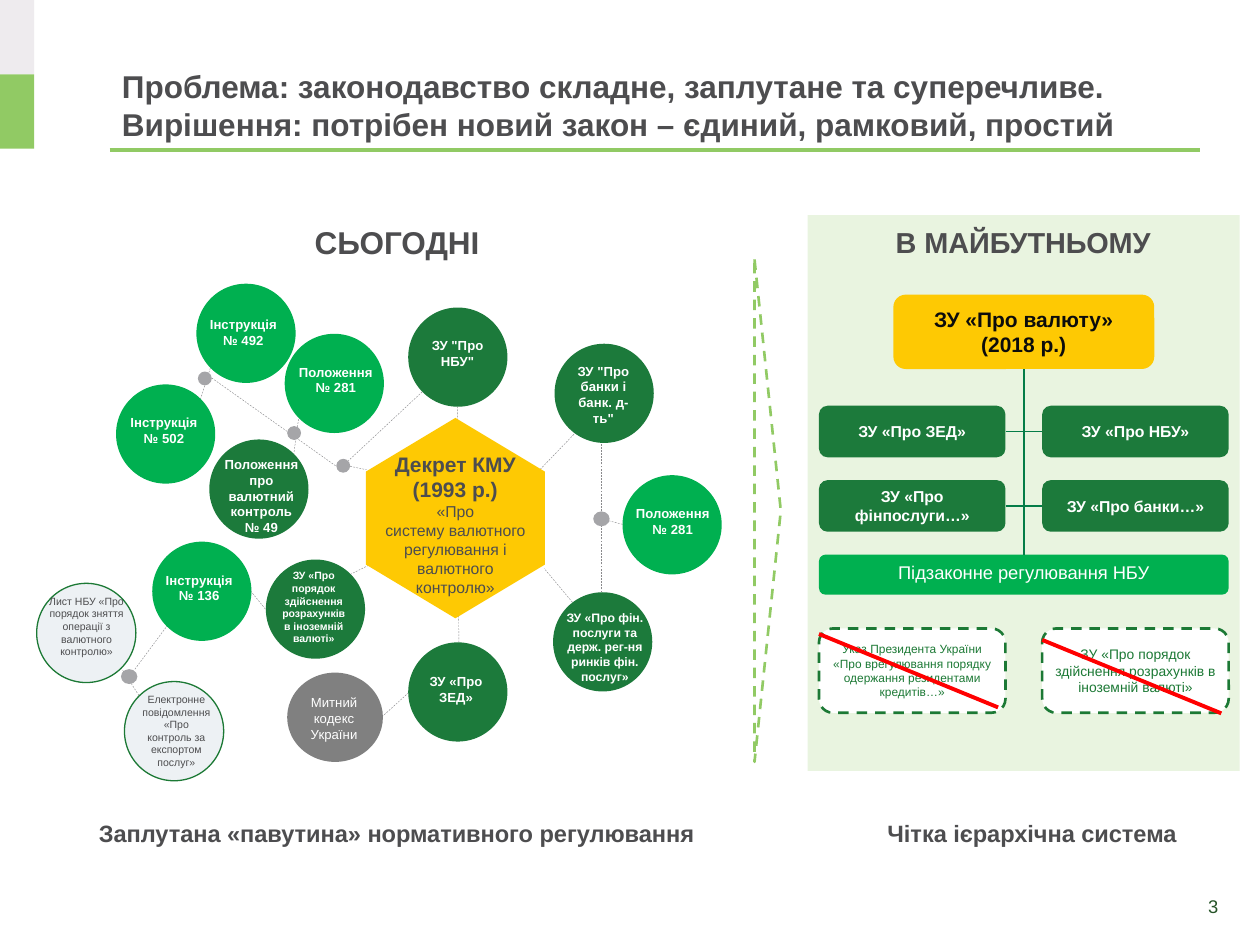
from typing import NamedTuple, Optional

import pptx
import pptx.dml.color
import pptx.enum.dml
import pptx.enum.shapes
import pptx.enum.text
import pptx.oxml.ns
import pptx.util
from lxml import etree

Cm, Pt = pptx.util.Cm, pptx.util.Pt
SHAPE = pptx.enum.shapes.MSO_SHAPE
ALIGN = pptx.enum.text.PP_ALIGN
ANCHOR = pptx.enum.text.MSO_ANCHOR

GREY, WHITE, BLACK = "4D4D4F", "FFFFFF", "0C0C0C"
DARK, BRIGHT, LIME, EDGE = "1C7A3B", "00B050", "91CA64", "1C7935"
YELLOW, PALE, CUSTOMS = "FEC903", "EDF1F4", "808080"
WEB, DOT, TREE, RED = "8A8A8D", "A5A5A8", "057C48", "FF0000"


class Box(NamedTuple):
    """Left, top, width and height in centimetres."""
    x: float
    y: float
    w: float
    h: float


class Style(NamedTuple):
    size: float
    color: str = GREY
    bold: bool = False


class Bubble(NamedTuple):
    text: str
    circle: Box
    label: Box
    fill: str
    style: Style
    edge: Optional[str] = None


class Caption(NamedTuple):
    text: str
    box: Box
    size: float


NORM = Style(7.5, WHITE, True)
SMALL = Style(6, GREY)
BOX_STYLE = Style(9, WHITE, True)


def disc(x: float, y: float) -> Box:
    return Box(x, y, 2, 2)


BUBBLES = [
    Bubble("Положення № 281", disc(12.55, 9.58), Box(12.52, 10.06, 2.08, 0.89), BRIGHT, NORM),
    Bubble('ЗУ "Про банки і банк. д-ть"', disc(11.18, 6.93), Box(11.2, 7.19, 1.93, 1.22), DARK, NORM),
    Bubble("ЗУ «Про фін. послуги та держ. рег-ня ринків фін. послуг»", disc(11.15, 11.94),
           Box(11.13, 12.17, 2.13, 1.75), DARK, Style(7, WHITE, True)),
    Bubble('ЗУ "Про НБУ"', disc(8.23, 6.2), Box(8.26, 6.68, 1.93, 0.89), DARK, NORM),
    Bubble("ЗУ «Про ЗЕД»", disc(8.23, 12.95), Box(8.23, 13.44, 1.93, 0.89), DARK, NORM),
    Bubble("ЗУ «Про порядок здійснення розрахунків в іноземній валюті»", disc(5.36, 11.28),
           Box(5.36, 11.35, 1.93, 1.8), DARK, Style(6, WHITE, True)),
    Bubble("Положення № 281", disc(5.74, 6.73), Box(5.74, 7.21, 2.06, 0.89), BRIGHT, NORM),
    Bubble("Положення про валютний контроль № 49", disc(4.22, 8.86),
           Box(4.24, 9.07, 2.06, 1.85), DARK, NORM),
    Bubble("Інструкція № 136", disc(3.07, 10.92), Box(3.05, 11.4, 1.93, 0.89), BRIGHT, NORM),
    Bubble("Лист НБУ «Про порядок зняття операції з валютного контролю»", disc(0.74, 11.76),
           Box(0.74, 11.86, 2.01, 2.01), PALE, SMALL, EDGE),
    Bubble("Електронне повідомлення «Про контроль за експортом послуг»", disc(2.51, 13.74),
           Box(2.59, 13.84, 1.93, 1.8), PALE, SMALL, EDGE),
    Bubble("Митний кодекс України", Box(5.79, 13.56, 1.93, 1.8),
           Box(5.77, 13.87, 1.93, 1.22), CUSTOMS, Style(7.5, WHITE)),
    Bubble("Інструкція № 492", disc(3.96, 5.72), Box(3.94, 6.25, 1.93, 0.89), BRIGHT, NORM),
    Bubble("Інструкція № 502", disc(2.34, 7.75), Box(2.34, 8.23, 1.93, 0.89), BRIGHT, NORM),
]
WEB_LINES = [
    (7.7, 14.45, 8.23, 13.97), (5.05, 11.91, 5.36, 12.29), (2.44, 13.46, 2.82, 14.05),
    (12.12, 12.95, 12.12, 8), (11.58, 12.19, 10.97, 11.46), (10.19, 10.19, 11.68, 8.64),
    (9.25, 12.95, 9.22, 8.2), (12.55, 10.57, 12.12, 10.46), (7.06, 11.58, 7.42, 11.4),
    (7.01, 9.3, 8.51, 7.9), (7.06, 9.4, 7.39, 9.47), (4.27, 7.62, 6.78, 9.4),
    (5.92, 9.17, 6.02, 8.43), (4.04, 8.05, 4.24, 7.42), (2.72, 13.49, 3.38, 12.6),
]
DOTS = [Box(6.78, 9.25, 0.28, 0.28), Box(11.96, 10.31, 0.33, 0.3), Box(5.79, 8.59, 0.28, 0.28),
        Box(3.99, 7.49, 0.28, 0.28), Box(2.44, 13.49, 0.33, 0.3)]
CAPTIONS = [
    Caption("Чітка ієрархічна система", Box(17.58, 16.38, 6.45, 0.84), 13.5),
    Caption("Заплутана «павутина» нормативного регулювання", Box(1.63, 16.38, 12.73, 0.84), 13.5),
    Caption("СЬОГОДНІ", Box(6.05, 4.37, 3.91, 1.02), 18),
    Caption("В МАЙБУТНЬОМУ", Box(17.73, 4.39, 5.79, 0.97), 16.5),
]
COLUMNS = (16.51, 21.01)
BOX_W = 3.76
LAW_ROWS = [(8.18, ("ЗУ «Про ЗЕД»", "ЗУ «Про НБУ»")),
            (9.68, ("ЗУ «Про фінпослуги…»", "ЗУ «Про банки…»"))]
# text, size, drop of the strike line below the box top
REPEALED = [
    ("Указ Президента України «Про врегулювання порядку одержання резидентами кредитів…»", 6.8, 0.11),
    ("ЗУ «Про порядок здійснення розрахунків в іноземній валюті»", 7.9, 0.23),
]


def rgb(value: str):
    return pptx.dml.color.RGBColor.from_string(value)


def set_line(line, color: str, width: float, dashed: bool) -> None:
    line.color.rgb = rgb(color)
    line.width = Pt(width)
    if dashed:
        line.dash_style = pptx.enum.dml.MSO_LINE.DASH


def add_shape(s, kind, box: Box, fill: str, edge: Optional[str] = None,
              width: float = 0.75, dashed: bool = False):
    sp = s.shapes.add_shape(kind, *map(Cm, box))
    sp.shadow.inherit = False
    sp.fill.solid()
    sp.fill.fore_color.rgb = rgb(fill)
    if edge:
        set_line(sp.line, edge, width, dashed)
    else:
        sp.line.fill.background()
    return sp


def add_line(s, ends, color: str, width: float, dashed: bool = False):
    c = s.shapes.add_connector(pptx.enum.shapes.MSO_CONNECTOR.STRAIGHT, *map(Cm, ends))
    set_line(c.line, color, width, dashed)
    etree.SubElement(c._element.spPr, pptx.oxml.ns.qn("a:effectLst"))
    return c


def join(s, first, first_site: int, last, last_site: int) -> None:
    c = add_line(s, (0, 0, 0, 0), TREE, 0.75)
    c.begin_connect(first, first_site)
    c.end_connect(last, last_site)


def set_text(sp, text: str, style: Style, align=ALIGN.CENTER, anchor=ANCHOR.MIDDLE,
             insets=(0.25, 0.13, 0.25, 0.13), wrap: bool = True, grow: bool = False):
    tf = sp.text_frame
    tf.text = text
    tf.word_wrap = wrap
    tf.vertical_anchor = anchor
    tf.margin_left, tf.margin_top, tf.margin_right, tf.margin_bottom = map(Cm, insets)
    if grow:
        tf.auto_size = pptx.enum.text.MSO_AUTO_SIZE.SHAPE_TO_FIT_TEXT
    for p in tf.paragraphs:
        p.alignment = align
        for r in p.runs:
            r.font.name, r.font.size, r.font.bold = "Arial", Pt(style.size), style.bold
            r.font.color.rgb = rgb(style.color)
    return tf


def add_text(s, box: Box, text: str, style: Style, **options):
    return set_text(s.shapes.add_textbox(*map(Cm, box)), text, style, **options)


def draw_frame(s) -> None:
    for y, color in ((0, "EEEBEE"), (1.5, LIME)):
        add_shape(s, SHAPE.RECTANGLE, Box(0, y, 0.69, 1.5), color)
    add_line(s, (2.21, 3.02, 24.2, 3.02), LIME, 2.25)
    add_text(s, Box(22.86, 17.75, 1.88, 1.04), "3", Style(10.5, "255327"), align=ALIGN.RIGHT,
             insets=(0.18, 0.1, 0.18, 0.1))
    add_shape(s, SHAPE.RECTANGLE, Box(16.28, 4.34, 8.71, 11.2), "E9F4E0")
    add_text(s, Box(2.21, 0.99, 22, 2.01),
             "Проблема: законодавство складне, заплутане та суперечливе. "
             "Вирішення: потрібен новий закон – єдиний, рамковий, простий",
             Style(18, GREY, True), align=ALIGN.LEFT, anchor=ANCHOR.BOTTOM)


def draw_web(s) -> None:
    for ends in WEB_LINES:
        add_line(s, ends, WEB, 0.25, True)
    decree = add_shape(s, SHAPE.HEXAGON, Box(7.16, 8.64, 4.04, 3.61), YELLOW)
    decree.rotation = 90
    decree.adjustments[0] = 0.3
    tf = add_text(s, Box(7.39, 9.09, 3.58, 2.95),
                  "Декрет КМУ\n(1993 р.)\n«Про\vсистему валютного регулювання і валютного\nконтролю»",
                  Style(9), insets=(0, 0, 0, 0), grow=True)
    for p in tf.paragraphs[:2]:
        p.runs[0].font.size, p.runs[0].font.bold = Pt(12), True
    for b in BUBBLES:
        add_shape(s, SHAPE.OVAL, b.circle, b.fill, b.edge)
        add_text(s, b.label, b.text, b.style, anchor=ANCHOR.TOP, grow=True)
    for dot in DOTS:
        add_shape(s, SHAPE.OVAL, dot, DOT)


def draw_hierarchy(s) -> None:
    tight = (0.08, 0.1, 0.08, 0.1)
    law = add_shape(s, SHAPE.ROUNDED_RECTANGLE, Box(18.01, 5.94, 5.26, 1.5), YELLOW)
    set_text(law, "ЗУ «Про валюту»\n(2018 р.)", Style(12, BLACK, True), insets=(0, 0, 0, 0))
    for y, texts in LAW_ROWS:
        pair = [add_shape(s, SHAPE.ROUNDED_RECTANGLE, Box(x, y, BOX_W, 1.04), DARK) for x in COLUMNS]
        for sp, text in zip(pair, texts):
            set_text(sp, text, BOX_STYLE, insets=tight)
        join(s, pair[0], 3, pair[1], 1)
    rules = add_shape(s, SHAPE.ROUNDED_RECTANGLE, Box(16.51, 11.18, 8.26, 0.81), BRIGHT)
    tf = set_text(rules, "Підзаконне регулювання НБУ", Style(10.5, WHITE), anchor=ANCHOR.TOP,
                  insets=(0.15, 0.15, 0.15, 0.23))
    tf.paragraphs[0].line_spacing = 0.9
    join(s, law, 2, rules, 0)
    top = 12.67
    for x, (text, size, drop) in zip(COLUMNS, REPEALED):
        sp = add_shape(s, SHAPE.ROUNDED_RECTANGLE, Box(x, top, BOX_W, 1.7), WHITE, EDGE, 1.5, True)
        set_text(sp, text, Style(size, EDGE), insets=tight)
        add_line(s, (x, top + drop, x + 3.61, top + drop + 1.48), RED, 2.25)


def main() -> None:
    prs = pptx.Presentation()
    prs.slide_width, prs.slide_height = Cm(25.4), Cm(19.05)
    s = prs.slides.add_slide(prs.slide_layouts[6])
    draw_frame(s)
    draw_web(s)
    draw_hierarchy(s)
    for c in CAPTIONS:
        add_text(s, c.box, c.text, Style(c.size, GREY, True), anchor=ANCHOR.TOP, wrap=False, grow=True)
    divider = add_shape(s, SHAPE.ISOSCELES_TRIANGLE, Box(10.41, 10.03, 10.13, 0.53), WHITE, LIME, 1.5, True)
    divider.rotation = 90
    prs.save("out.pptx")


if __name__ == "__main__":
    main()
